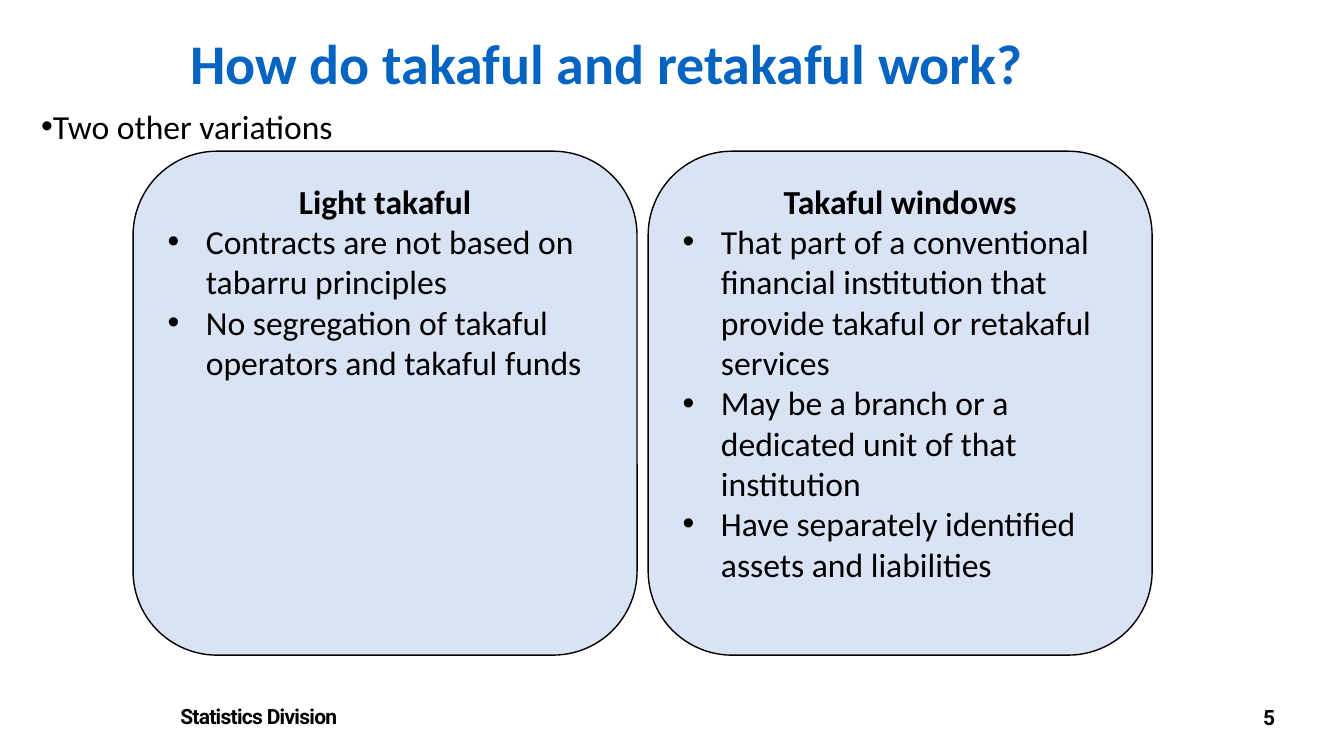
from dataclasses import dataclass

from lxml import etree
from pptx import Presentation
from pptx import util as u
from pptx.dml.color import RGBColor
from pptx.enum import shapes, text
from pptx.oxml.ns import qn


@dataclass(frozen=True)
class Theme:
    ink: str = "000000"
    paper: str = "FFFFFF"
    title: str = "0563C1"
    card: str = "DAE3F3"
    body_font: str = "Calibri"
    footer_font: str = "Roboto"
    title_size: float = 40
    body_size: float = 24
    footer_size: float = 15
    outline: float = 1


@dataclass(frozen=True)
class Area:
    """A place on the grid, in columns and rows."""
    left: float
    top: float
    width: float
    height: float


@dataclass(frozen=True)
class Card:
    heading: str
    points: tuple[str, ...]


THEME = Theme()
SLIDE_WIDTH, SLIDE_HEIGHT = u.Inches(13.33), u.Inches(7.5)
COLUMN, ROW = SLIDE_WIDTH / 40, SLIDE_HEIGHT / 30

TITLE_AREA = Area(4.98, 0.92, 26.13, 3.08)
SUBTITLE_AREA = Area(0.93, 4, 37, 2)
FOOTER_AREA = Area(5.07, 27.72, 17.52, 1.4)
NUMBER_AREA = Area(32.55, 27.76, 5.7, 1.4)
CARD_LEFT, CARD_TOP, CARD_WIDTH, CARD_HEIGHT = 3.96, 6, 15, 20
CARD_GAP = 0.33

CARDS = (
    Card("Light takaful", (
        "Contracts are not based on tabarru principles",
        "No segregation of takaful operators and takaful funds",
    )),
    Card("Takaful windows", (
        "That part of a conventional financial institution that provide "
        "takaful or retakaful services",
        "May be a branch or a dedicated unit of that institution",
        "Have separately identified assets and liabilities",
    )),
)


def place(area: Area) -> tuple[int, int, int, int]:
    return (round(area.left * COLUMN), round(area.top * ROW),
            round(area.width * COLUMN), round(area.height * ROW))


def write(frame, content: str, *, size: float = THEME.body_size,
          color: str = THEME.ink, font: str = THEME.body_font,
          bold: bool = False, align=text.PP_ALIGN.LEFT,
          bullet_indent: float = 0, spacing: float = 0,
          space_after: float = 0) -> None:
    """Add one formatted paragraph, using the first one while it is empty."""
    first = frame.paragraphs[0]
    paragraph = frame.add_paragraph() if first.runs else first
    paragraph.alignment = align
    paragraph.space_after = u.Pt(space_after)
    if bullet_indent:
        properties = paragraph._p.get_or_add_pPr()
        indent = u.Inches(bullet_indent)
        properties.set("marL", str(indent))
        properties.set("indent", str(-indent))
        etree.SubElement(properties, qn("a:buFont"), typeface="Arial")
        etree.SubElement(properties, qn("a:buChar"), char="•")
    run = paragraph.add_run()
    run.text = content
    run.font.size = u.Pt(size)
    run.font.name = font
    run.font.bold = bold
    run.font.color.rgb = RGBColor.from_string(color)
    if spacing:
        run.font._element.set("spc", str(round(spacing * 100)))


def add_text(slide, area: Area):
    frame = slide.shapes.add_textbox(*place(area)).text_frame
    frame.word_wrap = True
    frame.auto_size = text.MSO_AUTO_SIZE.SHAPE_TO_FIT_TEXT
    return frame


def add_footer(slide, area: Area, content: str, align) -> None:
    shape = slide.shapes.add_shape(shapes.MSO_SHAPE.RECTANGLE, *place(area))
    shape.shadow.inherit = False
    shape.fill.solid()
    shape.fill.fore_color.rgb = RGBColor.from_string(THEME.paper)
    shape.line.fill.background()
    frame = shape.text_frame
    frame.word_wrap = True
    frame.vertical_anchor = text.MSO_ANCHOR.TOP
    write(frame, content, size=THEME.footer_size, font=THEME.footer_font,
          bold=True, align=align, spacing=-0.5, space_after=18)


def add_card(slide, area: Area, card: Card) -> None:
    shape = slide.shapes.add_shape(shapes.MSO_SHAPE.ROUNDED_RECTANGLE, *place(area))
    shape.shadow.inherit = False
    shape.fill.solid()
    shape.fill.fore_color.rgb = RGBColor.from_string(THEME.card)
    shape.line.color.rgb = RGBColor.from_string(THEME.ink)
    shape.line.width = u.Pt(THEME.outline)
    frame = shape.text_frame
    frame.word_wrap = True
    frame.vertical_anchor = text.MSO_ANCHOR.TOP
    write(frame, card.heading, bold=True, align=text.PP_ALIGN.CENTER)
    for point in card.points:
        write(frame, point, bullet_indent=0.38)


def main() -> None:
    presentation = Presentation()
    presentation.slide_width = SLIDE_WIDTH
    presentation.slide_height = SLIDE_HEIGHT
    slide = presentation.slides.add_slide(presentation.slide_layouts[6])

    # Footer
    add_footer(slide, FOOTER_AREA, "Statistics Division", text.PP_ALIGN.LEFT)
    add_footer(slide, NUMBER_AREA, "5", text.PP_ALIGN.RIGHT)

    # Title and lead-in
    write(add_text(slide, TITLE_AREA), "How do takaful and retakaful work?",
          size=THEME.title_size, color=THEME.title, bold=True,
          align=text.PP_ALIGN.CENTER)
    write(add_text(slide, SUBTITLE_AREA), "Two other variations",
          bullet_indent=0.06)

    # Cards side by side
    for index, card in enumerate(CARDS):
        left = CARD_LEFT + index * (CARD_WIDTH + CARD_GAP)
        add_card(slide, Area(left, CARD_TOP, CARD_WIDTH, CARD_HEIGHT), card)

    presentation.save("out.pptx")


if __name__ == "__main__":
    main()
